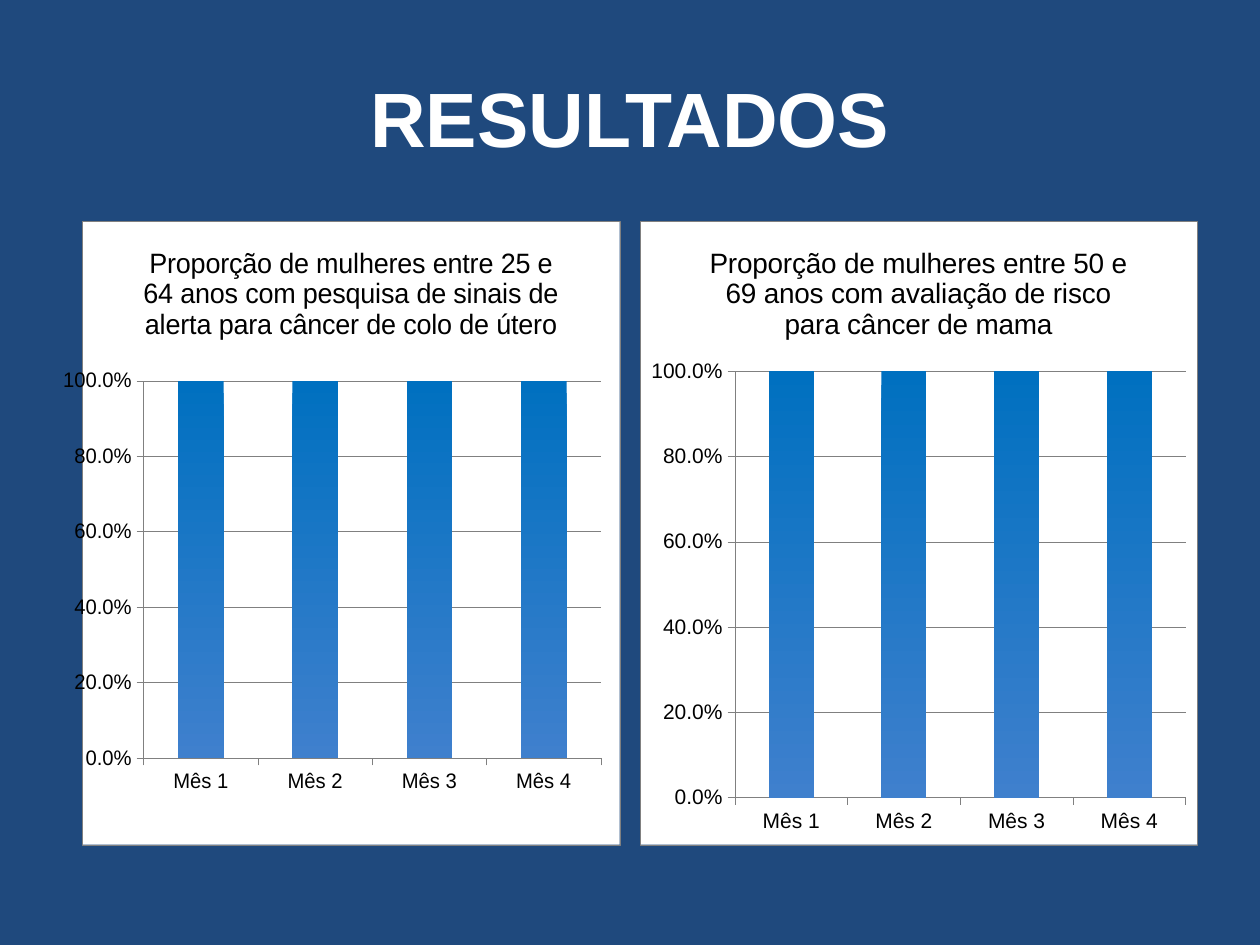
from lxml.etree import SubElement
from pptx import Presentation
from pptx.chart.data import CategoryChartData
from pptx.dml.color import RGBColor
from pptx.enum.chart import XL_CHART_TYPE as ChartType, XL_TICK_MARK as TickMark
from pptx.enum.text import MSO_ANCHOR as Anchor, PP_ALIGN as Align
from pptx.oxml import parse_xml
from pptx.oxml.ns import nsdecls, qn
from pptx.util import Emu, Pt

NAVY = RGBColor(0x1F, 0x49, 0x7D)
WHITE = RGBColor(0xFF, 0xFF, 0xFF)
BLACK = RGBColor(0, 0, 0)
GREY = RGBColor(0x80, 0x80, 0x80)
BAR_TOP = RGBColor(0x00, 0x70, 0xC0)
BAR_BOTTOM = RGBColor(0x3F, 0x80, 0xCD)

EMU_PER_PX = 914400 / 126
MONTHS = [f"Mês {number}" for number in range(1, 5)]
CHART_TOP, CHART_WIDTH, CHART_HEIGHT = 221, 557, 624
CHARTS = [
    (63, "Proporção de mulheres entre 25 e 64 anos com pesquisa de sinais de "
         "alerta para câncer de colo de útero",
     {"x": 0.114, "y": 0.256, "w": 0.851, "h": 0.605}),
    (640, "Proporção de mulheres entre 50 e 69 anos com avaliação de risco "
          "para câncer de mama", None),
]


def px(length):
    return Emu(round(length * EMU_PER_PX))


def area_properties(border):
    """Return a chart spPr with a white fill and the given outline content."""
    return parse_xml(
        f'<c:spPr {nsdecls("c", "a")}><a:solidFill><a:srgbClr val="{WHITE}"/>'
        f'</a:solidFill><a:ln w="{Pt(0.25)}">{border}</a:ln></c:spPr>')


class SlideBuilder:
    font_name = "Arial"

    def __init__(self, slide):
        self.slide = slide

    def background(self, color):
        fill = self.slide.background.fill
        fill.solid()
        fill.fore_color.rgb = color

    def style_font(self, font, size, color, bold=False):
        font.name = self.font_name
        font.size = Pt(size)
        font.bold = bold
        font.color.rgb = color

    def style_line(self, line):
        line.color.rgb = GREY
        line.width = Pt(0.25)

    def title(self, text, left, top, width, height):
        box = self.slide.shapes.title
        box.left, box.top, box.width, box.height = map(px, (left, top, width, height))
        frame = box.text_frame
        frame.text = text
        frame.vertical_anchor = Anchor.MIDDLE
        para = frame.paragraphs[0]
        para.alignment = Align.CENTER
        self.style_font(para.font, 44, WHITE, bold=True)

    def column_chart(self, title, values, left, top, width, height, plot_layout=None):
        data = CategoryChartData(number_format="0.0%")
        data.categories = MONTHS
        data.add_series(title, values)
        chart = self.slide.shapes.add_chart(
            ChartType.COLUMN_CLUSTERED, *map(px, (left, top, width, height)), data).chart
        self.style_font(chart.font, 12, BLACK)
        chart.has_legend = False
        chart.has_title = True
        heading = chart.chart_title.text_frame
        heading.text = title
        self.style_font(heading.paragraphs[0].font, 16, BLACK)
        self.axes(chart)
        self.columns(chart.plots[0])
        self.areas(chart, plot_layout)

    def axes(self, chart):
        for axis in (chart.category_axis, chart.value_axis):
            axis.major_tick_mark = TickMark.OUTSIDE
            axis.minor_tick_mark = TickMark.NONE
            self.style_line(axis.format.line)
        scale = chart.value_axis
        scale.minimum_scale, scale.maximum_scale, scale.major_unit = 0, 1, 0.2
        scale.tick_labels.number_format = "0.0%"
        scale.tick_labels.number_format_is_linked = False
        scale.has_major_gridlines = True
        self.style_line(scale.major_gridlines.format.line)

    def columns(self, plot):
        plot.gap_width = 150
        plot.vary_by_categories = False
        fill = plot.series[0].format.fill
        fill.gradient()
        fill.gradient_angle = 270
        for stop, position, color in zip(fill.gradient_stops, (0, 1), (BAR_TOP, BAR_BOTTOM)):
            stop.position = position
            stop.color.rgb = color

    def areas(self, chart, plot_layout):
        """Fill the chart and plot areas and fix the inner plot position, if given."""
        chart_node = chart.element.find(qn("c:chart"))
        chart_node.addnext(area_properties(
            f'<a:solidFill><a:srgbClr val="{GREY}"/></a:solidFill>'))
        plot_area = chart_node.find(qn("c:plotArea"))
        plot_area.append(area_properties("<a:noFill/>"))
        if plot_layout is None:
            return
        for old_layout in plot_area.findall(qn("c:layout")):
            plot_area.remove(old_layout)
        layout = parse_xml(f'<c:layout {nsdecls("c")}/>')
        manual = SubElement(layout, qn("c:manualLayout"))
        settings = {"layoutTarget": "inner", "xMode": "edge", "yMode": "edge", **plot_layout}
        for name, value in settings.items():
            SubElement(manual, qn(f"c:{name}")).set("val", str(value))
        plot_area.insert(0, layout)


def main():
    deck = Presentation()
    deck.slide_width, deck.slide_height = px(1260), px(945)
    page = SlideBuilder(deck.slides.add_slide(deck.slide_layouts[5]))
    page.background(NAVY)
    page.title("RESULTADOS", 63, 38, 1134, 158)
    for left, title, plot_layout in CHARTS:
        page.column_chart(title, [1] * len(MONTHS), left, CHART_TOP,
                          CHART_WIDTH, CHART_HEIGHT, plot_layout)
    deck.save("out.pptx")


if __name__ == "__main__":
    main()
